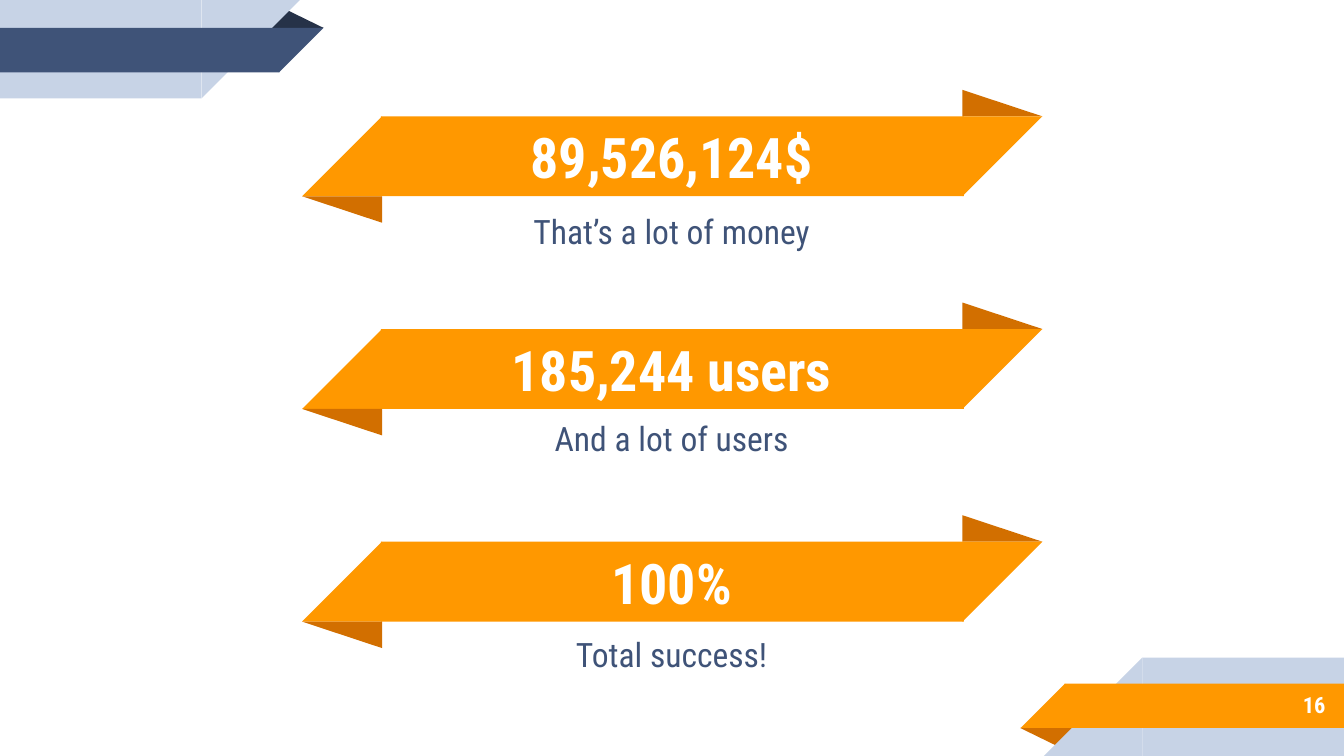
from pptx import Presentation
from pptx.dml.color import RGBColor as RGB
from pptx.enum.shapes import MSO_SHAPE as Form
from pptx.enum.text import MSO_ANCHOR as Anchor, MSO_AUTO_SIZE as Fit, PP_ALIGN as Align
from pptx.util import Cm, Pt

WIDE, HIGH = 25.4, 14.29
FONT = "Roboto Condensed"
HUES = {
    "white": "FFFFFF",
    "navy": "3F5378",
    "night": "263248",
    "pale": "C7D3E6",
    "gold": "FF9800",
    "rust": "D26F00",
}

# Text formats
BIG = {"size": Pt(30), "bold": True, "hue": "white", "align": Align.CENTER}
NOTE = {"size": Pt(18), "bold": False, "hue": "navy", "align": Align.CENTER,
        "space_before": Pt(6), "space_after": Pt(10)}
PAGE = {"size": Pt(12), "bold": True, "hue": "white", "align": Align.RIGHT}

# Figure, caption, caption top below the ribbon top, caption height
FACTS = [
    ("89,526,124$", "That’s a lot of money", 1.51, 1.3),
    ("185,244 users", "And a lot of users", 1.5, 1.14),
    ("100%", "Total success!", 1.55, 1.14),
]
FIRST, STEP = 2.2, 4.02
LEFT, RIGHT, BAND, FOLD = 5.71, 18.19, 1.51, 0.5


def color(name):
    return RGB.from_string(HUES[name])


def add_form(slide, kind, box, hue, turn=0, tip=None):
    form = slide.shapes.add_shape(kind, *map(Cm, box))
    form.shadow.inherit = False
    form.fill.solid()
    form.fill.fore_color.rgb = color(hue)
    form.line.fill.background()
    form.rotation = turn
    if tip is not None:
        form.adjustments[0] = tip


def set_text(shape, text, box, style):
    for name, size in zip(("left", "top", "width", "height"), box):
        setattr(shape, name, Cm(size))
    frame = shape.text_frame
    frame.text = text
    layout = {"word_wrap": True, "auto_size": Fit.NONE,
              "vertical_anchor": Anchor.MIDDLE}
    for side in ("left", "top", "right", "bottom"):
        layout["margin_" + side] = Cm(0.25)
    for name, value in layout.items():
        setattr(frame, name, value)

    para = frame.paragraphs[0]
    for name in ("align", "space_before", "space_after"):
        key = "alignment" if name == "align" else name
        setattr(para, key, style.get(name, Pt(0)))
    font = para.runs[0].font
    for name in ("size", "bold"):
        setattr(font, name, style[name])
    font.name = FONT
    font.color.rgb = color(style["hue"])


def add_text(slide, text, box, style):
    set_text(slide.shapes.add_textbox(*map(Cm, box)), text, box, style)


def add_corner(slide, main, dark, turned=False):
    parts = [
        (Form.ISOSCELES_TRIANGLE, (5.03, 0.17, 1.09, 0.36), dark, 0, 0.324),
        (Form.RECTANGLE, (0, 0, 3.81, 1.86), "pale", 0, None),
        (Form.RIGHT_TRIANGLE, (3.81, 0, 1.86, 1.86), "pale", 90, None),
        (Form.RECTANGLE, (0, 0.53, 5.28, 0.84), main, 0, None),
        (Form.RIGHT_TRIANGLE, (5.27, 0.53, 0.84, 0.84), main, 90, None),
    ]
    for kind, box, hue, turn, tip in parts:
        if turned:
            # Half a turn about the middle of the slide
            x, y, w, h = box
            box = (WIDE - x - w, HIGH - y - h, w, h)
            turn += 180
        add_form(slide, kind, box, hue, turn, tip)


def add_ribbon(slide, top):
    end = top + BAND
    add_form(slide, Form.ISOSCELES_TRIANGLE, (RIGHT, top - FOLD, BAND, FOLD),
             "rust", tip=0)
    add_form(slide, Form.RECTANGLE, (7.2, top, 11.02, BAND), "gold")
    add_form(slide, Form.RIGHT_TRIANGLE, (RIGHT, top, BAND, BAND), "gold", 90)
    add_form(slide, Form.RIGHT_TRIANGLE, (LEFT, top, BAND, BAND), "gold", 270)
    add_form(slide, Form.ISOSCELES_TRIANGLE, (LEFT, end, BAND, FOLD),
             "rust", 180, 0)


def main():
    deck = Presentation()
    deck.slide_width, deck.slide_height = Cm(WIDE), Cm(HIGH)
    slide = deck.slides.add_slide(deck.slide_layouts[5])

    # Corner ribbons
    add_corner(slide, "navy", "night")
    add_corner(slide, "gold", "rust", turned=True)

    # Ribbons with figures and captions
    title = slide.shapes.title
    for i, (figure, note, drop, tall) in enumerate(FACTS):
        top = FIRST + i * STEP
        add_ribbon(slide, top)
        box = (7.26, top + 0.02, 10.87, 1.47)
        if i == 0:
            set_text(title, figure, box, BIG)
            # Bring the title in front of its ribbon
            title.element.getparent().append(title.element)
        else:
            add_text(slide, figure, box, BIG)
        add_text(slide, note, (7.26, top + drop, 10.87, tall), NOTE)

    # Page number
    add_text(slide, "16", (21.16, 12.88, 4.14, 0.89), PAGE)
    deck.save("out.pptx")


if __name__ == "__main__":
    main()
